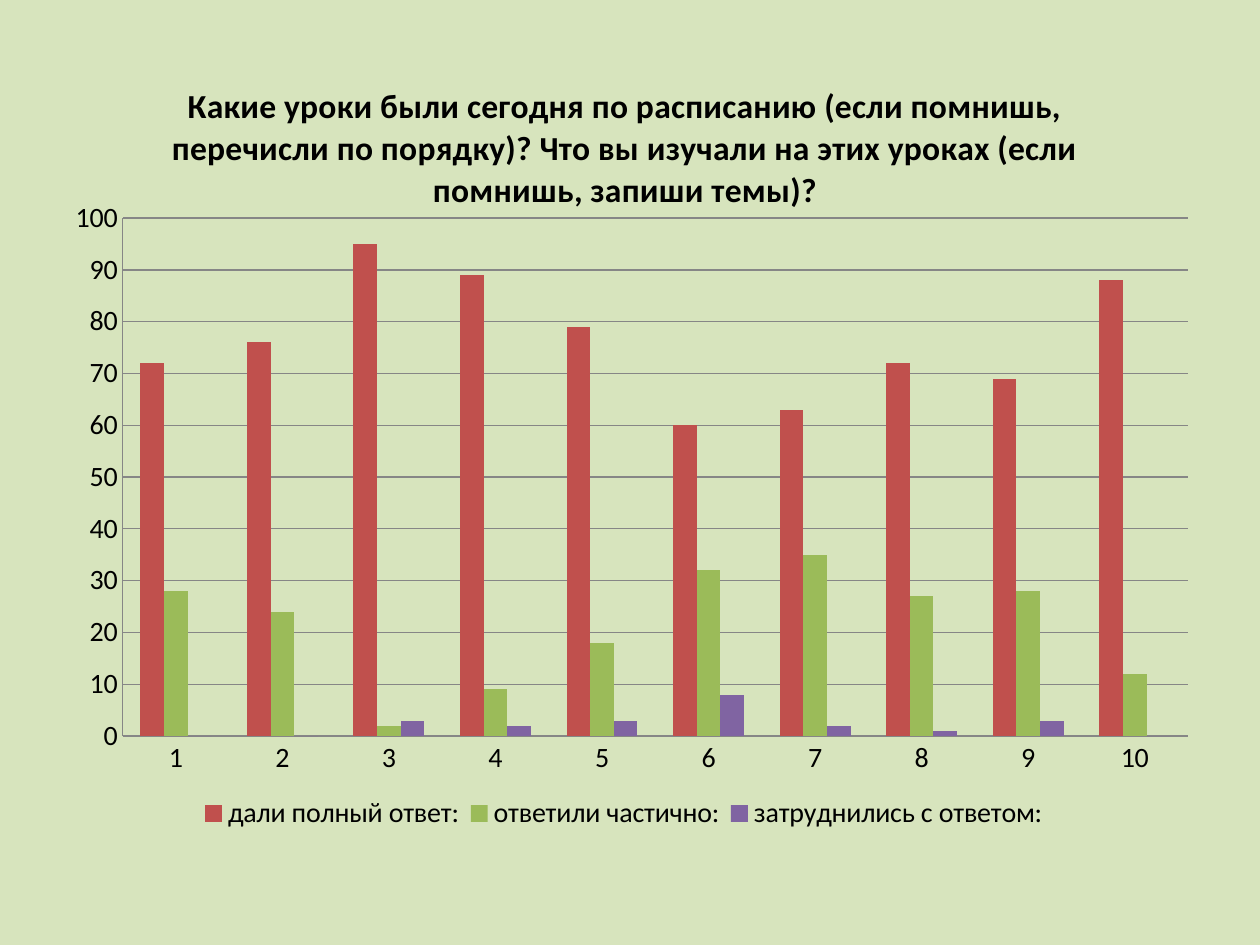
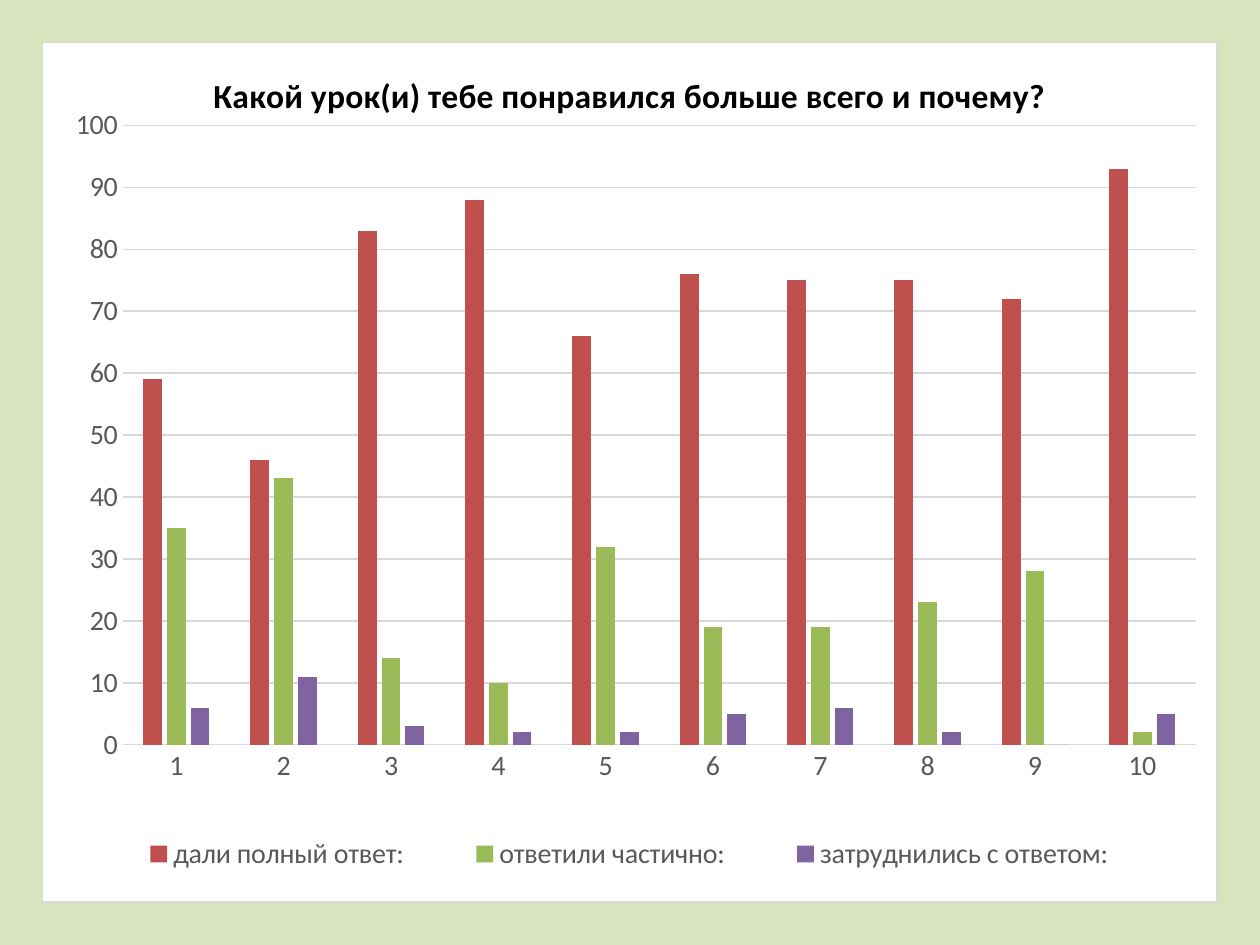
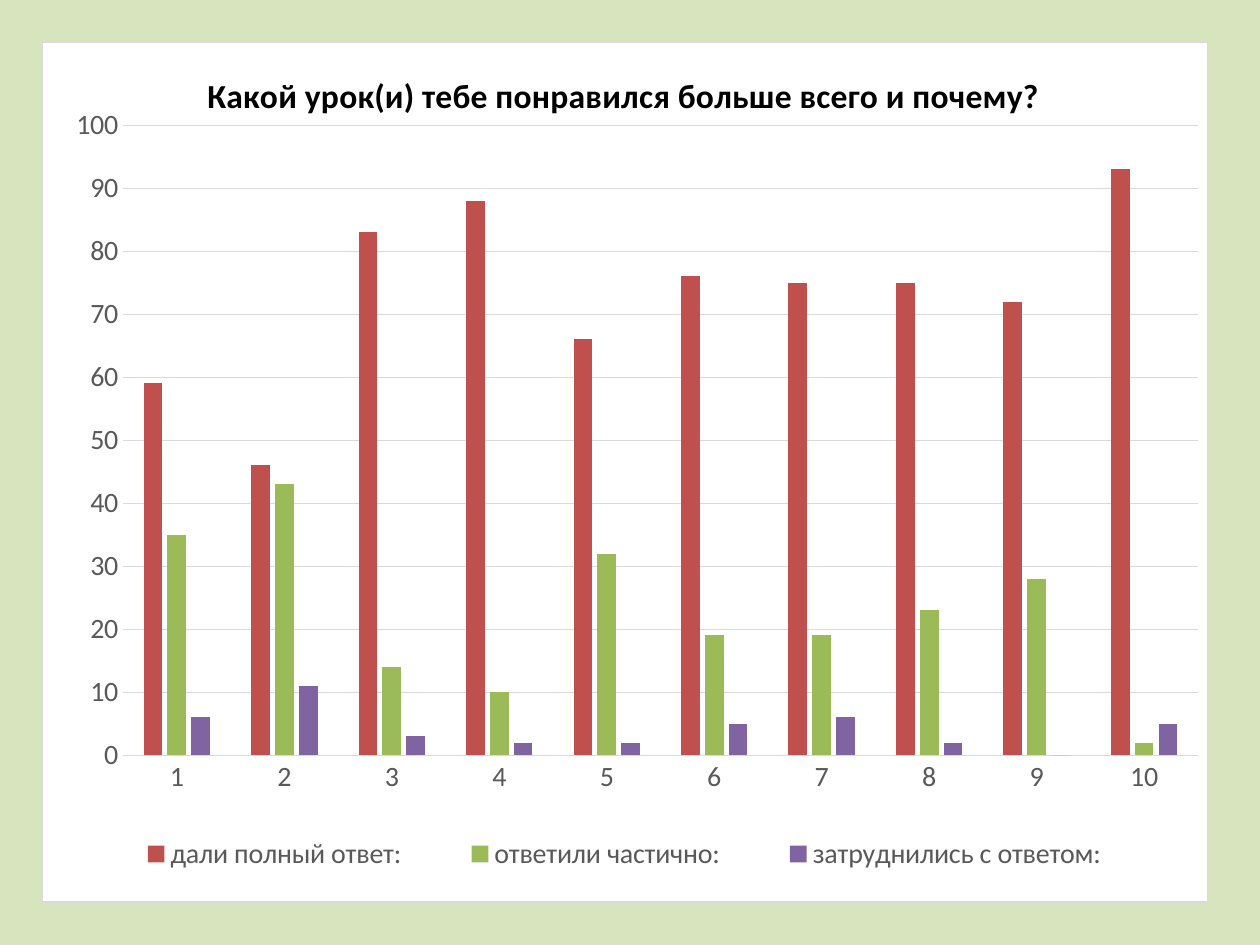
from lxml.etree import SubElement
from pptx import Presentation
from pptx.chart.data import CategoryChartData
from pptx.dml.color import RGBColor
from pptx.enum.chart import XL_CHART_TYPE, XL_LEGEND_POSITION, XL_TICK_MARK
from pptx.oxml import parse_xml
from pptx.oxml.ns import nsdecls, qn
from pptx.util import Cm, Pt

COLORS = {
    "page": "D7E4BD", "card": "FFFFFF", "title": "000000",
    "dark_text": "000000", "gray_text": "595959",
    "dark_line": "868686", "light_line": "D9D9D9",
    "full": "C0504D", "partial": "9BBB59", "none": "8064A2",
}
FONT = "Calibri"
ANSWERS = {
    "full": "дали полный ответ:",
    "partial": "ответили частично:",
    "none": "затруднились с ответом:",
}
SCHEDULE_TITLE = ("Какие уроки были сегодня по расписанию (если помнишь, "
                  "перечисли по порядку)? Что вы изучали на этих уроках "
                  "(если помнишь, запиши темы)?")
SCHEDULE_VALUES = {
    "full": (72, 76, 95, 89, 79, 60, 63, 72, 69, 88),
    "partial": (28, 24, 2, 9, 18, 32, 35, 27, 28, 12),
    "none": (0, 0, 3, 2, 3, 8, 2, 1, 3, 0),
}
FAVORITE_TITLE = "Какой урок(и) тебе понравился больше всего и почему?"
FAVORITE_VALUES = {
    "full": (59, 46, 83, 88, 66, 76, 75, 75, 72, 93),
    "partial": (35, 43, 14, 10, 32, 19, 19, 23, 28, 2),
    "none": (6, 11, 3, 2, 2, 5, 6, 2, 0, 5),
}
# Bar spacing and colours of the two chart looks
PLAIN = {"text": "dark_text", "line": "dark_line", "gap": 150, "overlap": 0,
         "card": False}
CARD = {"text": "gray_text", "line": "light_line", "gap": 219, "overlap": -27,
        "card": True}


def color(name):
    return RGBColor.from_string(COLORS[name])


def set_font(font, size, color_name, bold=False):
    font.name, font.size, font.bold = FONT, Pt(size), bold
    font.color.rgb = color(color_name)


def set_line(line, color_name):
    line.color.rgb = color(color_name)
    line.width = Pt(0.75)


def place(part, index, bounds, inner=False):
    """Place a chart part by percent of the chart: x, y and maybe w, h."""
    for old in part.findall(qn("c:layout")):
        part.remove(old)
    layout = parse_xml(f"<c:layout {nsdecls('c')}/>")
    part.insert(index, layout)
    manual = SubElement(layout, qn("c:manualLayout"))
    if inner:
        SubElement(manual, qn("c:layoutTarget")).set("val", "inner")
    for mode in ("xMode", "yMode"):
        SubElement(manual, qn(f"c:{mode}")).set("val", "edge")
    for side, percent in zip("xywh", bounds):
        SubElement(manual, qn(f"c:{side}")).set("val", f"{percent / 100:.3f}")


def set_background(chart, look):
    fill, line = "<a:noFill/>", "<a:noFill/>"
    if look["card"]:
        solid = '<a:solidFill><a:srgbClr val="{}"/></a:solidFill>'
        fill = solid.format(COLORS["card"])
        line = solid.format(COLORS[look["line"]])
    chart_space = chart.element
    chart_space.find(qn("c:chart")).addnext(parse_xml(
        f'<c:spPr {nsdecls("c", "a")}>{fill}'
        f'<a:ln w="{Pt(0.75)}">{line}</a:ln></c:spPr>'))
    if chart_space.find(qn("c:roundedCorners")) is None:
        chart_space.find(qn("c:date1904")).addnext(parse_xml(
            f'<c:roundedCorners {nsdecls("c")} val="0"/>'))


def add_title(chart, text, bounds):
    frame = chart.chart_title.text_frame
    span = frame.paragraphs[0].add_run()
    span.text = text
    set_font(span.font, 19.2, "title", bold=True)
    place(chart.chart_title._element, 1, bounds)


def style_axes(chart, look):
    for axis in (chart.category_axis, chart.value_axis):
        axis.major_tick_mark = axis.minor_tick_mark = XL_TICK_MARK.NONE
        set_font(axis.tick_labels.font, 16, look["text"])
        set_line(axis.format.line, look["line"])
    values = chart.value_axis
    values.minimum_scale, values.maximum_scale = 0, 100
    values.major_unit = 10
    values.has_major_gridlines = True
    set_line(values.major_gridlines.format.line, look["line"])
    if look["card"]:
        values.format.line.fill.background()


def add_legend(chart, look, bounds):
    chart.has_legend = True
    legend = chart.legend
    legend.position = XL_LEGEND_POSITION.BOTTOM
    legend.include_in_layout = False
    set_font(legend.font, 16, look["text"])
    place(legend._element, 1, bounds)


def add_survey_page(deck, box, title, values, look, layout):
    """Add a page with one survey chart filling the box (in cm)."""
    page = deck.slides.add_slide(deck.slide_layouts[6])
    page.background.fill.solid()
    page.background.fill.fore_color.rgb = color("page")

    # Data
    data = CategoryChartData()
    data.categories = [str(number) for number in range(1, 11)]
    for answer, name in ANSWERS.items():
        data.add_series(name, values[answer])
    chart = page.shapes.add_chart(XL_CHART_TYPE.COLUMN_CLUSTERED,
                                  *map(Cm, box), data).chart

    # Bars
    set_font(chart.font, 16, "dark_text")
    plot = chart.plots[0]
    plot.vary_by_categories = False
    plot.gap_width, plot.overlap = look["gap"], look["overlap"]
    for answer, series in zip(ANSWERS, plot.series):
        series.format.fill.solid()
        series.format.fill.fore_color.rgb = color(answer)

    # Surroundings
    set_background(chart, look)
    add_title(chart, title, layout["title"])
    style_axes(chart, look)
    add_legend(chart, look, layout["legend"])
    place(chart.element.find(".//" + qn("c:plotArea")), 0, layout["plot"],
          inner=True)


def main():
    deck = Presentation()
    deck.slide_width, deck.slide_height = Cm(25.4), Cm(19.05)
    add_survey_page(deck, (0.85, 1.07, 23.5, 17.15), SCHEDULE_TITLE,
                    SCHEDULE_VALUES, PLAIN,
                    {"title": (10.6, 2.7), "plot": (6.9, 19.4, 91.4, 60.9),
                     "legend": (13, 86.9, 73.8, 5)})
    for width, title_left, plot in ((23.7, 14, (6.8, 9.6, 91.4, 72.1)),
                                    (23.5, 13.6, (6.9, 9.6, 92.3, 73.3))):
        add_survey_page(deck, (0.85, 0.85, width, 17.35), FAVORITE_TITLE,
                        FAVORITE_VALUES, CARD,
                        {"title": (title_left, 2.7), "plot": plot,
                         "legend": (3.8, 90.4, 92.3, 8)})
    deck.save("out.pptx")


if __name__ == "__main__":
    main()
